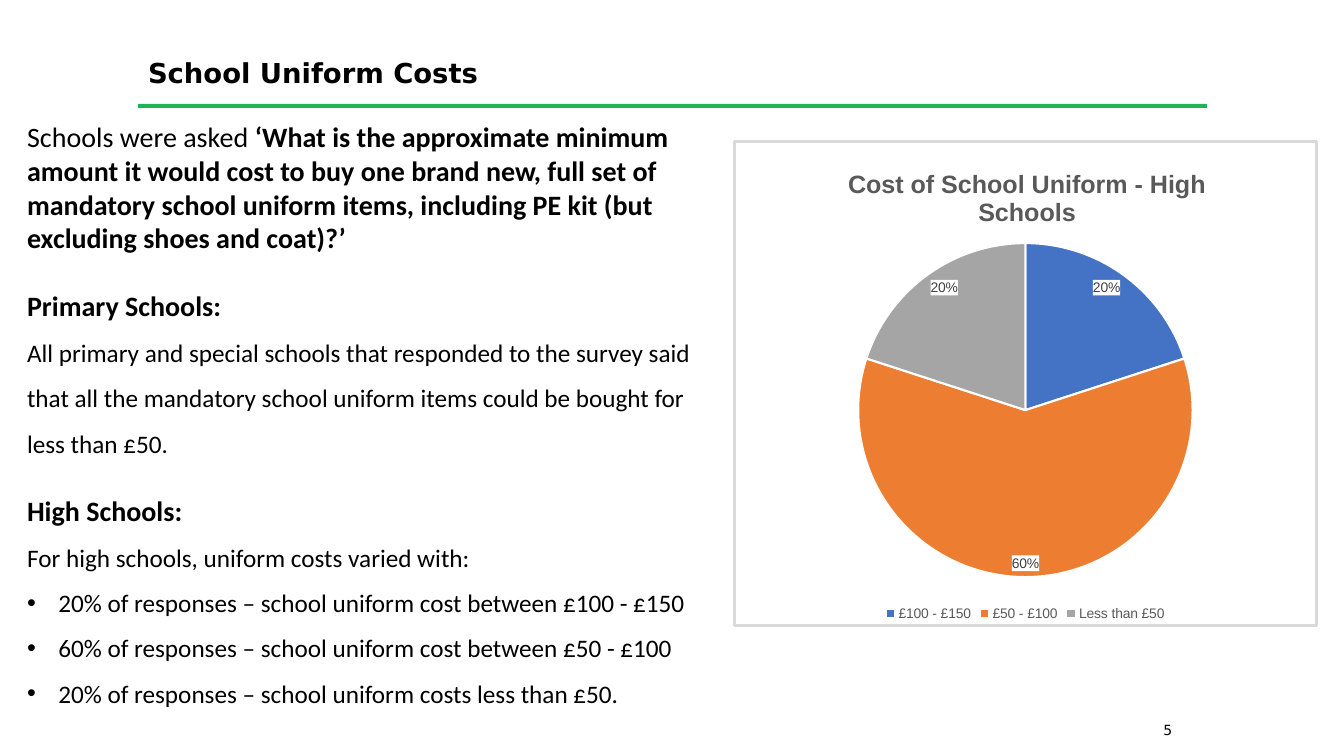
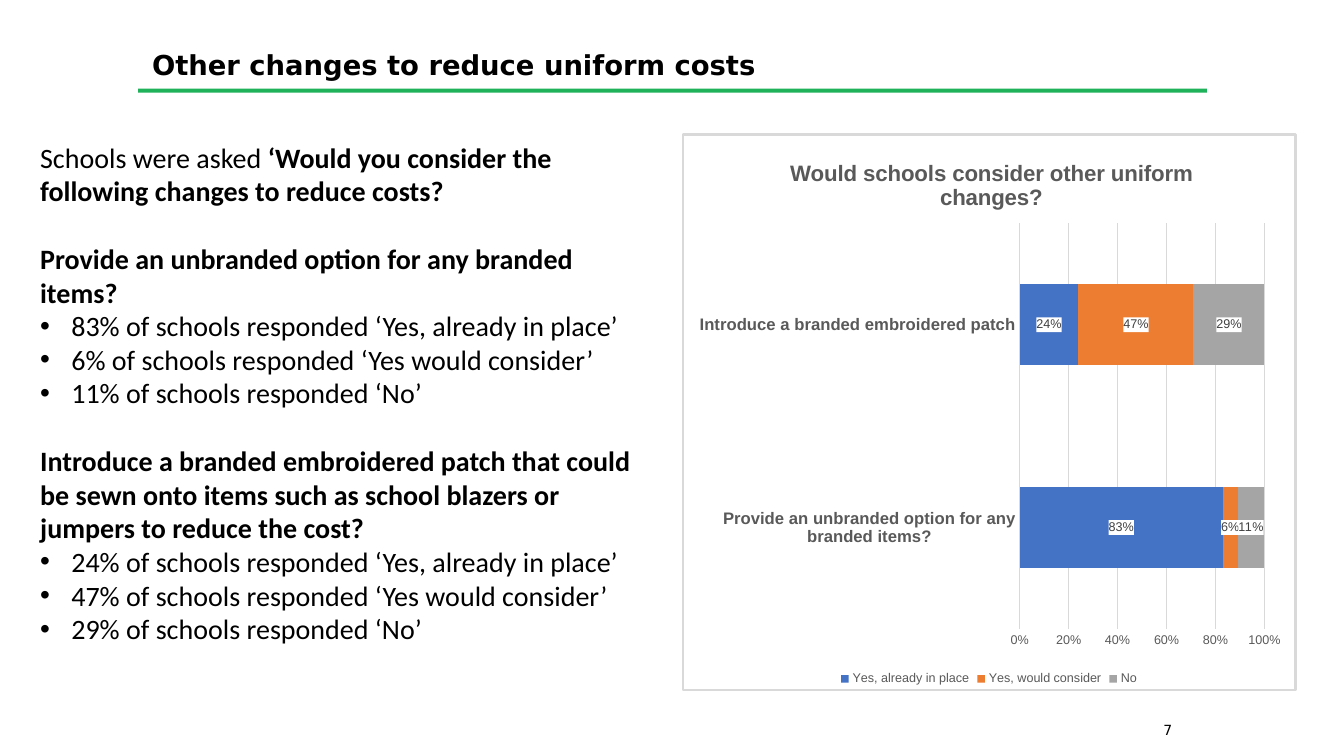
from dataclasses import dataclass

from lxml import etree
from pptx import Presentation
from pptx.chart.chart import Chart
from pptx.chart.data import CategoryChartData
from pptx.chart.series import _BaseCategorySeries
from pptx.dml.color import RGBColor
from pptx.enum.chart import XL_CHART_TYPE, XL_LABEL_POSITION, XL_LEGEND_POSITION, XL_TICK_MARK
from pptx.enum.shapes import MSO_SHAPE
from pptx.enum.text import MSO_ANCHOR
from pptx.oxml import parse_xml
from pptx.oxml.ns import nsdecls, qn
from pptx.slide import Slide
from pptx.text.text import Font, TextFrame, _Paragraph
from pptx.util import Inches, Pt


@dataclass(frozen=True)
class Theme:
    black: str = "000000"
    white: str = "FFFFFF"
    green: str = "1FB25A"
    border: str = "D9D9D9"
    chart_text: str = "595959"
    label_text: str = "404040"
    answers: tuple[str, ...] = ("4472C4", "ED7D31", "A5A5A5")
    title_font: str = "DejaVu Sans"
    body_font: str = "Calibri"
    chart_font: str = "Arial"
    title_size: float = 19.6
    number_size: float = 10
    lead_size: float = 20
    detail_size: float = 18


THEME = Theme()


@dataclass(frozen=True)
class Box:
    left: float
    top: float
    width: float
    height: float

    def lengths(self) -> tuple[int, int, int, int]:
        return Inches(self.left), Inches(self.top), Inches(self.width), Inches(self.height)


@dataclass(frozen=True)
class Passage:
    plain: str = ""
    strong: str = ""
    size: float = THEME.lead_size
    before: float = 0
    spacing: float = 1
    bullet: bool = False


@dataclass(frozen=True)
class Survey:
    kind: XL_CHART_TYPE
    box: Box
    title: tuple[str, ...]
    title_size: float
    title_spot: tuple[float, float]
    plot: Box
    small_size: float
    number_format: str
    categories: tuple[str, ...]
    series: dict[str, tuple[float, ...]]


@dataclass(frozen=True)
class Page:
    title: str
    title_box: Box
    rule_top: float
    number: str
    body_box: Box
    body: tuple[Passage, ...]
    survey: Survey


def style_font(font: Font, *, name: str, size: float, color: str, bold: bool = False) -> None:
    font.name = name
    font.size = Pt(size)
    font.bold = bold
    font.color.rgb = RGBColor.from_string(color)


def add_run(paragraph: _Paragraph, text: str, *, name: str, size: float,
            color: str = THEME.black, bold: bool = False) -> None:
    run = paragraph.add_run()
    run.text = text
    style_font(run.font, name=name, size=size, color=color, bold=bold)


def add_frame(slide: Slide, box: Box) -> TextFrame:
    frame = slide.shapes.add_textbox(*box.lengths()).text_frame
    frame.word_wrap = True
    return frame


def add_bullet(paragraph: _Paragraph) -> None:
    properties = paragraph._p.get_or_add_pPr()
    properties.set("marL", str(Inches(0.31)))
    properties.set("indent", str(-Inches(0.31)))
    etree.SubElement(properties, qn("a:buFont"), typeface="Arial")
    etree.SubElement(properties, qn("a:buChar"), char="•")


def add_heading(slide: Slide, page: Page) -> None:
    frame = add_frame(slide, page.title_box)
    frame.vertical_anchor = MSO_ANCHOR.BOTTOM
    frame.margin_bottom = Inches(0.08)
    add_run(frame.paragraphs[0], page.title, name=THEME.title_font,
            size=THEME.title_size, bold=True)
    rule = slide.shapes.add_shape(MSO_SHAPE.RECTANGLE,
                                  *Box(1.37, page.rule_top, 10.6, 0.04).lengths())
    rule.shadow.inherit = False
    rule.fill.solid()
    rule.fill.fore_color.rgb = RGBColor.from_string(THEME.green)
    rule.line.fill.background()


def add_number(slide: Slide, number: str) -> None:
    frame = add_frame(slide, Box(11.44, 7.11, 0.52, 0.36))
    add_run(frame.paragraphs[0], number, name=THEME.title_font, size=THEME.number_size)


def add_body(slide: Slide, page: Page) -> None:
    frame = add_frame(slide, page.body_box)
    for index, passage in enumerate(page.body):
        paragraph = frame.add_paragraph() if index else frame.paragraphs[0]
        paragraph.line_spacing = passage.spacing
        paragraph.space_before = Pt(passage.before)
        if passage.bullet:
            add_bullet(paragraph)
        for text, bold in ((passage.plain, False), (passage.strong, True)):
            if text:
                add_run(paragraph, text, name=THEME.body_font, size=passage.size, bold=bold)


def place(element: etree._Element, position: int, **offsets: float) -> None:
    for old in element.findall(qn("c:layout")):
        element.remove(old)
    layout = etree.Element(qn("c:layout"))
    manual = etree.SubElement(layout, qn("c:manualLayout"))
    for tag, value in offsets.items():
        if tag == "x" and "w" in offsets:
            etree.SubElement(manual, qn("c:layoutTarget"), val="inner")
        if tag == "x":
            for mode in ("c:xMode", "c:yMode"):
                etree.SubElement(manual, qn(mode), val="edge")
        etree.SubElement(manual, qn(f"c:{tag}"), val=str(value))
    element.insert(position, layout)


def panel(line: str) -> etree._Element:
    return parse_xml(
        f'<c:spPr {nsdecls("c", "a")}><a:solidFill><a:srgbClr val="{THEME.white}"/>'
        f'</a:solidFill><a:ln w="{Pt(2)}">{line}</a:ln></c:spPr>')


def add_labels(series: _BaseCategorySeries, survey: Survey) -> None:
    labels = series.data_labels
    is_pie = survey.kind == XL_CHART_TYPE.PIE
    labels.show_percentage = is_pie
    labels.show_value = not is_pie
    labels.number_format = "0%"
    labels.number_format_is_linked = False
    labels.position = XL_LABEL_POSITION.INSIDE_END if is_pie else XL_LABEL_POSITION.CENTER
    style_font(labels.font, name=THEME.chart_font, size=survey.small_size,
               color=THEME.label_text)
    labels._element.find(qn("c:txPr")).addprevious(panel("<a:noFill/>"))


def style_pie(chart: Chart, survey: Survey) -> None:
    slices = chart.plots[0].series[0]
    for index, color in enumerate(THEME.answers):
        slice_format = slices.points[index].format
        slice_format.fill.solid()
        slice_format.fill.fore_color.rgb = RGBColor.from_string(color)
        slice_format.line.color.rgb = RGBColor.from_string(THEME.white)
        slice_format.line.width = Pt(1.5)
    add_labels(slices, survey)


def style_bars(chart: Chart, survey: Survey) -> None:
    plot = chart.plots[0]
    plot.gap_width = 150
    plot.overlap = 100
    for answer, color in zip(plot.series, THEME.answers):
        answer.format.fill.solid()
        answer.format.fill.fore_color.rgb = RGBColor.from_string(color)
        add_labels(answer, survey)
    questions, shares = chart.category_axis, chart.value_axis
    for axis, size, bold in ((questions, 12, True), (shares, survey.small_size, False)):
        axis.major_tick_mark = axis.minor_tick_mark = XL_TICK_MARK.NONE
        style_font(axis.tick_labels.font, name=THEME.chart_font, size=size,
                   color=THEME.chart_text, bold=bold)
    shares.has_major_gridlines = True
    shares.major_unit = 0.2
    shares.tick_labels.number_format = "0%"
    shares.tick_labels.number_format_is_linked = False
    shares.format.line.fill.background()
    for line in (questions.format.line, shares.major_gridlines.format.line):
        line.color.rgb = RGBColor.from_string(THEME.border)
        line.width = Pt(0.75)


def add_survey(slide: Slide, survey: Survey) -> None:
    data = CategoryChartData(number_format=survey.number_format)
    data.categories = survey.categories
    for name, values in survey.series.items():
        data.add_series(name, values)
    chart = slide.shapes.add_chart(survey.kind, *survey.box.lengths(), data).chart
    style_font(chart.font, name=THEME.chart_font, size=10, color=THEME.black)
    chart.plots[0].vary_by_categories = survey.kind == XL_CHART_TYPE.PIE

    chart.has_title = True
    heading = chart.chart_title.text_frame
    for index, line in enumerate(survey.title):
        paragraph = heading.add_paragraph() if index else heading.paragraphs[0]
        add_run(paragraph, line, name=THEME.chart_font, size=survey.title_size,
                color=THEME.chart_text, bold=True)
    left, top = survey.title_spot
    place(chart.chart_title._element, 1, x=left, y=top)

    chart.has_legend = True
    chart.legend.position = XL_LEGEND_POSITION.BOTTOM
    chart.legend.include_in_layout = False
    style_font(chart.legend.font, name=THEME.chart_font, size=survey.small_size,
               color=THEME.chart_text)
    if survey.kind == XL_CHART_TYPE.PIE:
        style_pie(chart, survey)
    else:
        style_bars(chart, survey)

    chart_root = chart._chartSpace
    plot = survey.plot
    place(chart_root.find(f".//{qn('c:plotArea')}"), 0,
          x=plot.left, y=plot.top, w=plot.width, h=plot.height)
    edge = f'<a:solidFill><a:srgbClr val="{THEME.border}"/></a:solidFill>'
    chart_root.find(qn("c:chart")).addnext(panel(edge))


def detail(text: str, bullet: bool = False) -> Passage:
    return Passage(text, size=THEME.detail_size, spacing=1.5, bullet=bullet)


def responses(already: int, consider: int, no: int) -> tuple[Passage, ...]:
    answers = ((already, "Yes, already in place"), (consider, "Yes would consider"), (no, "No"))
    return tuple(Passage(f"{share}% of schools responded ‘{answer}’", bullet=True)
                 for share, answer in answers)


PAGES = (
    Page("School Uniform Costs", Box(1.37, 0.25, 10.52, 0.71), 1.03, "5",
         Box(0.17, 1.14, 6.81, 6.29),
         (Passage("Schools were asked ", "‘What is the approximate minimum amount it would cost "
                  "to buy one brand new, full set of mandatory school uniform items, including "
                  "PE kit (but excluding shoes and coat)?’"),
          Passage(strong="Primary Schools:", before=24.4),
          detail("All primary and special schools that responded to the survey said that all "
                 "the mandatory school uniform items could be bought for less than £50."),
          Passage(strong="High Schools:", before=25),
          detail("For high schools, uniform costs varied with:"),
          detail("20% of responses – school uniform cost between £100 - £150", bullet=True),
          detail("60% of responses – school uniform cost between £50 - £100", bullet=True),
          detail("20% of responses – school uniform costs less than £50.", bullet=True)),
         Survey(XL_CHART_TYPE.PIE, Box(7.27, 1.39, 5.8, 4.83),
                ("Cost of School Uniform - High", "Schools"), 18, (0.19, 0.05),
                Box(0.21, 0.21, 0.58, 0.69), 10, "General",
                ("£100 - £150", "£50 - £100", "Less than £50"), {"Series 1": (20, 60, 20)})),
    Page("Other changes to reduce uniform costs", Box(1.41, 0.17, 10.52, 0.71), 0.88, "7",
         Box(0.3, 1.34, 6.1, 5.15),
         (Passage("Schools were asked ",
                  "‘Would you consider the following changes to reduce costs?"),
          Passage(strong="Provide an unbranded option for any branded items?", before=24.4),
          *responses(83, 6, 11),
          Passage(strong="Introduce a branded embroidered patch that could be sewn onto items "
                  "such as school blazers or jumpers to reduce the cost?", before=24.4),
          *responses(24, 47, 29)),
         Survey(XL_CHART_TYPE.BAR_STACKED_100, Box(6.76, 1.32, 6.1, 5.54),
                ("Would schools consider other uniform", "changes?"), 16, (0.17, 0.04),
                Box(0.55, 0.16, 0.4, 0.73), 9, "0%",
                ("Provide an unbranded option for any branded items?",
                 "Introduce a branded embroidered patch"),
                {"Yes, already in place": (0.83, 0.24), "Yes, would consider": (0.06, 0.47),
                 "No": (0.11, 0.29)})),
)


def main() -> None:
    deck = Presentation()
    deck.slide_width, deck.slide_height = Inches(13.33), Inches(7.5)
    for page in PAGES:
        slide = deck.slides.add_slide(deck.slide_layouts[6])
        add_heading(slide, page)
        add_number(slide, page.number)
        add_body(slide, page)
        add_survey(slide, page.survey)
    deck.save("out.pptx")


if __name__ == "__main__":
    main()
